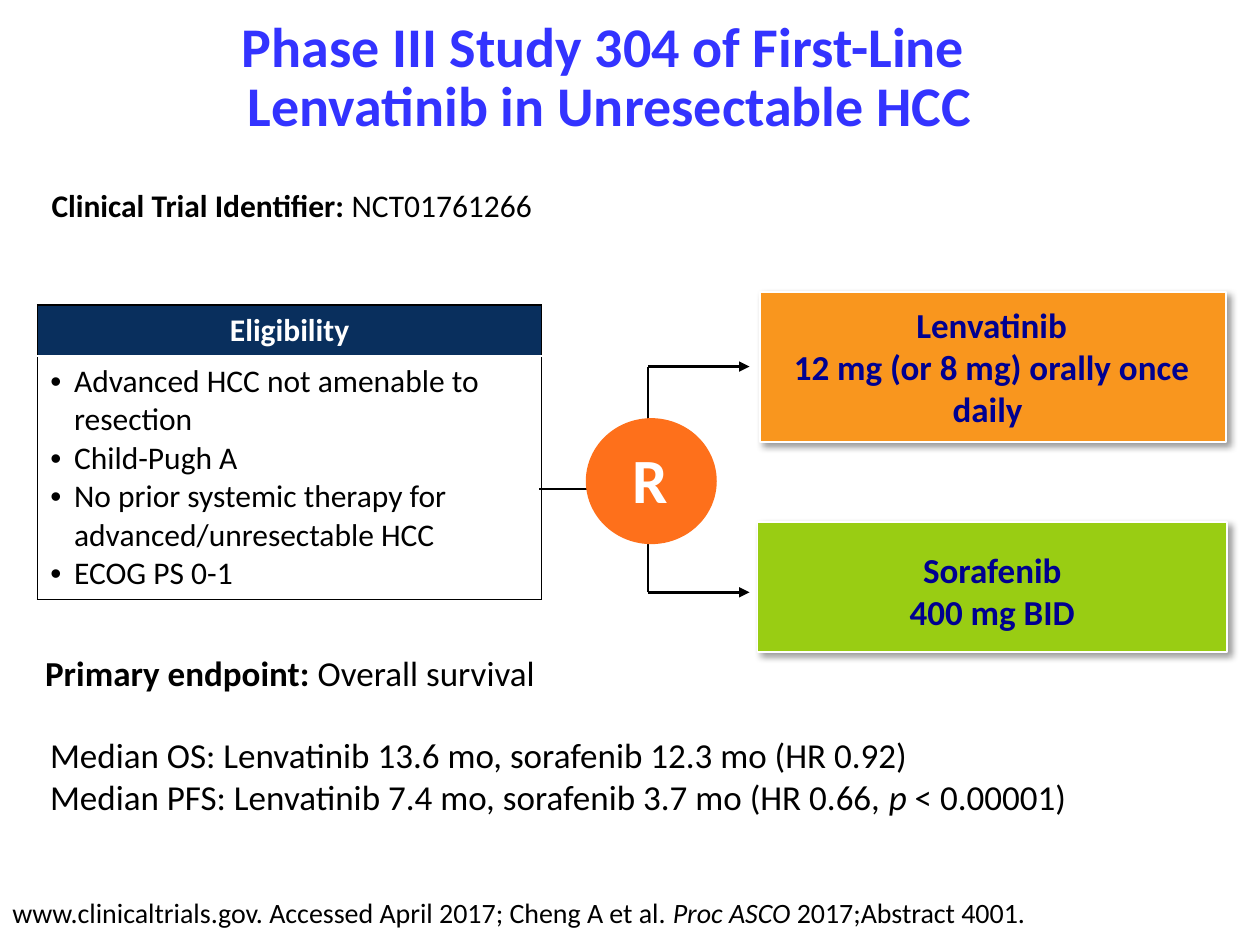
"""Build the slide on the phase III study of first-line lenvatinib."""
from dataclasses import dataclass

from lxml.etree import SubElement
from pptx import Presentation
from pptx.dml.color import RGBColor
from pptx.enum.shapes import MSO_CONNECTOR, MSO_SHAPE
from pptx.enum.text import MSO_ANCHOR, MSO_AUTO_SIZE, PP_ALIGN
from pptx.oxml.ns import qn
from pptx.util import Cm, Pt

FONT = "Calibri"
BLACK = RGBColor(0x00, 0x00, 0x00)
WHITE = RGBColor(0xFF, 0xFF, 0xFF)
BLUE = RGBColor(0x33, 0x33, 0xFF)
NAVY = RGBColor(0x09, 0x2F, 0x5D)
DARK_BLUE = RGBColor(0x00, 0x00, 0x90)
RANDOM_ORANGE = RGBColor(0xFE, 0x70, 0x1B)
ORANGE = RGBColor(0xF9, 0x96, 0x1E)
GREEN = RGBColor(0x99, 0xCD, 0x13)
CRITERIA = (
    "Advanced HCC not amenable to resection",
    "Child-Pugh A",
    "No prior systemic therapy for advanced/unresectable HCC",
    "ECOG PS 0-1",
)


@dataclass
class Run:
    text: str
    bold: bool = False
    italic: bool = False


@dataclass
class Label:
    box: tuple[float, float, float, float]
    paragraphs: list[list[Run]]
    size: int
    color: RGBColor = BLACK
    align: PP_ALIGN = PP_ALIGN.LEFT
    anchor: MSO_ANCHOR = MSO_ANCHOR.TOP
    margins: tuple[float, float, float, float] = (0.25, 0.13, 0.25, 0.13)
    grow: bool = True
    spacing: float = 1.0


@dataclass
class Panel:
    kind: MSO_SHAPE
    box: tuple[float, float, float, float]
    color: RGBColor
    raised: bool = True


@dataclass
class Line:
    start: tuple[float, float]
    end: tuple[float, float]
    arrow: bool = False


STEM_X, ARROW_X, TOP_Y, BOTTOM_Y = 13.06, 15.11, 7.39, 11.94
LINES = [
    Line((10.87, 9.86), (12.65, 9.86)),
    Line((STEM_X, BOTTOM_Y), (STEM_X, TOP_Y)),
    Line((STEM_X, BOTTOM_Y), (ARROW_X, BOTTOM_Y), True),
    Line((STEM_X, TOP_Y), (ARROW_X, TOP_Y), True),
]
PANELS = [
    Panel(MSO_SHAPE.OVAL, (11.81, 8.43, 2.64, 2.54), RANDOM_ORANGE, False),
    Panel(MSO_SHAPE.RECTANGLE, (15.32, 5.89, 9.4, 3.02), ORANGE),
    Panel(MSO_SHAPE.RECTANGLE, (15.27, 10.52, 9.47, 2.62), GREEN),
]
LABELS = [
    Label((1.5, 0.08, 21.59, 3.05),
          [[Run("Phase III Study 304 of First-Line \vLenvatinib in Unresectable HCC", True)]],
          32, BLUE, PP_ALIGN.CENTER, MSO_ANCHOR.MIDDLE, (0, 0, 0, 0), False, 0.88),
    Label((0.66, 13, 13.41, 1.12),
          [[Run("Primary endpoint: ", True), Run("Overall survival")]], 20),
    Label((12.01, 8.66, 2.21, 2.11), [[Run("R", True)]], 36, WHITE,
          PP_ALIGN.CENTER, MSO_ANCHOR.MIDDLE, (0, 0, 0, 0.13), False),
    Label((15.29, 5.99, 9.4, 2.82),
          [[Run("Lenvatinib", True)], [Run("12 mg (or 8 mg) orally once daily ", True)]],
          20, DARK_BLUE, PP_ALIGN.CENTER),
    Label((15.27, 10.92, 9.47, 1.96),
          [[Run("Sorafenib", True)], [Run("400 mg BID", True)]],
          20, DARK_BLUE, PP_ALIGN.CENTER),
    Label((0.79, 3.63, 11.02, 1.02),
          [[Run("Clinical Trial Identifier: ", True), Run("NCT01761266")]], 18),
    Label((0, 17.93, 21.89, 0.94),
          [[Run("www.clinicaltrials.gov. Accessed April 2017; Cheng A et al. "),
            Run("Proc ASCO ", italic=True), Run("2017;Abstract 4001.")]],
          16, anchor=MSO_ANCHOR.BOTTOM),
    Label((0.76, 14.66, 22.4, 1.96),
          [[Run("Median OS: Lenvatinib 13.6 mo, sorafenib 12.3 mo (HR 0.92)")],
           [Run("Median PFS: Lenvatinib 7.4 mo, sorafenib 3.7 mo (HR 0.66, "),
            Run("p", italic=True), Run(" < 0.00001)")]], 20),
]


def add_run(p, run: Run, size: int, color: RGBColor) -> None:
    """Append a run, turning vertical tabs into line breaks."""
    for i, part in enumerate(run.text.split("\v")):
        if i:
            p.add_line_break()
        r = p.add_run()
        r.text = part
        r.font.name, r.font.size = FONT, Pt(size)
        r.font.bold, r.font.italic = run.bold, run.italic
        r.font.color.rgb = color


def add_label(s, label: Label) -> None:
    """Draw a text box."""
    tf = s.shapes.add_textbox(*map(Cm, label.box)).text_frame
    tf.word_wrap = True
    tf.auto_size = MSO_AUTO_SIZE.SHAPE_TO_FIT_TEXT if label.grow else MSO_AUTO_SIZE.NONE
    tf.vertical_anchor = label.anchor
    tf.margin_left, tf.margin_top, tf.margin_right, tf.margin_bottom = map(Cm, label.margins)
    for i, runs in enumerate(label.paragraphs):
        p = tf.add_paragraph() if i else tf.paragraphs[0]
        p.alignment, p.line_spacing = label.align, label.spacing
        for run in runs:
            add_run(p, run, label.size, label.color)


def add_panel(s, panel: Panel) -> None:
    """Draw a filled shape, with a soft shadow when raised."""
    sp = s.shapes.add_shape(panel.kind, *map(Cm, panel.box))
    sp.fill.solid()
    sp.fill.fore_color.rgb = panel.color
    sp.shadow.inherit = False
    if not panel.raised:
        sp.line.fill.background()
        return
    sp.line.color.rgb, sp.line.width = WHITE, Pt(1)
    effects = sp._element.spPr.find(qn("a:effectLst"))
    shadow = SubElement(effects, qn("a:outerShdw"), blurRad=str(Pt(4)), dist=str(Pt(3)),
                        dir="2700000", algn="tl", rotWithShape="0")
    color = SubElement(shadow, qn("a:srgbClr"), val=str(BLACK))
    SubElement(color, qn("a:alpha"), val="40000")


def add_line(s, line: Line) -> None:
    """Draw a straight line, with an arrowhead on request."""
    c = s.shapes.add_connector(MSO_CONNECTOR.STRAIGHT, *map(Cm, line.start + line.end))
    c.line.color.rgb, c.line.width = BLACK, Pt(1.5)
    if line.arrow:
        SubElement(c.line._get_or_add_ln(), qn("a:tailEnd"), type="triangle")
    SubElement(c._element.spPr, qn("a:effectLst"))


def set_borders(cell, top: RGBColor, bottom: RGBColor) -> None:
    """Give a cell black sides and the stated top and bottom; white edges are thicker."""
    for side, color in zip("LRTB", (BLACK, BLACK, top, bottom)):
        width = Pt(1.5 if color == WHITE else 1)
        ln = SubElement(cell._tc.get_or_add_tcPr(), qn(f"a:ln{side}"), w=str(width))
        SubElement(SubElement(ln, qn("a:solidFill")), qn("a:srgbClr"), val=str(color))


def add_eligibility(s) -> None:
    """Draw the eligibility table."""
    table = s.shapes.add_table(2, 1, *map(Cm, (0.76, 6.15, 10.16, 5.93))).table
    table.rows[0].height, table.rows[1].height = Cm(1.03), Cm(4.9)
    head, body = table.cell(0, 0), table.cell(1, 0)
    set_borders(head, BLACK, WHITE)
    set_borders(body, WHITE, BLACK)
    head.fill.solid()
    head.fill.fore_color.rgb = NAVY
    body.fill.background()
    head.vertical_anchor = MSO_ANCHOR.MIDDLE
    p = head.text_frame.paragraphs[0]
    p.alignment = PP_ALIGN.CENTER
    add_run(p, Run("Eligibility", True), 18, WHITE)
    tf = body.text_frame
    for i, text in enumerate(CRITERIA):
        p = tf.add_paragraph() if i else tf.paragraphs[0]
        pPr = p._p.get_or_add_pPr()
        pPr.set("marL", str(Cm(0.48)))
        pPr.set("indent", str(-Cm(0.48)))
        SubElement(pPr, qn("a:buFont"), typeface="Arial")
        SubElement(pPr, qn("a:buChar"), char="•")
        add_run(p, Run(text), 18, BLACK)


def main() -> None:
    """Build and save the slide."""
    prs = Presentation()
    prs.slide_width, prs.slide_height = Cm(25.4), Cm(19.05)
    s = prs.slides.add_slide(prs.slide_layouts[6])
    add_eligibility(s)
    for draw, items in ((add_line, LINES), (add_panel, PANELS), (add_label, LABELS)):
        for item in items:
            draw(s, item)
    prs.save("out.pptx")


if __name__ == "__main__":
    main()
